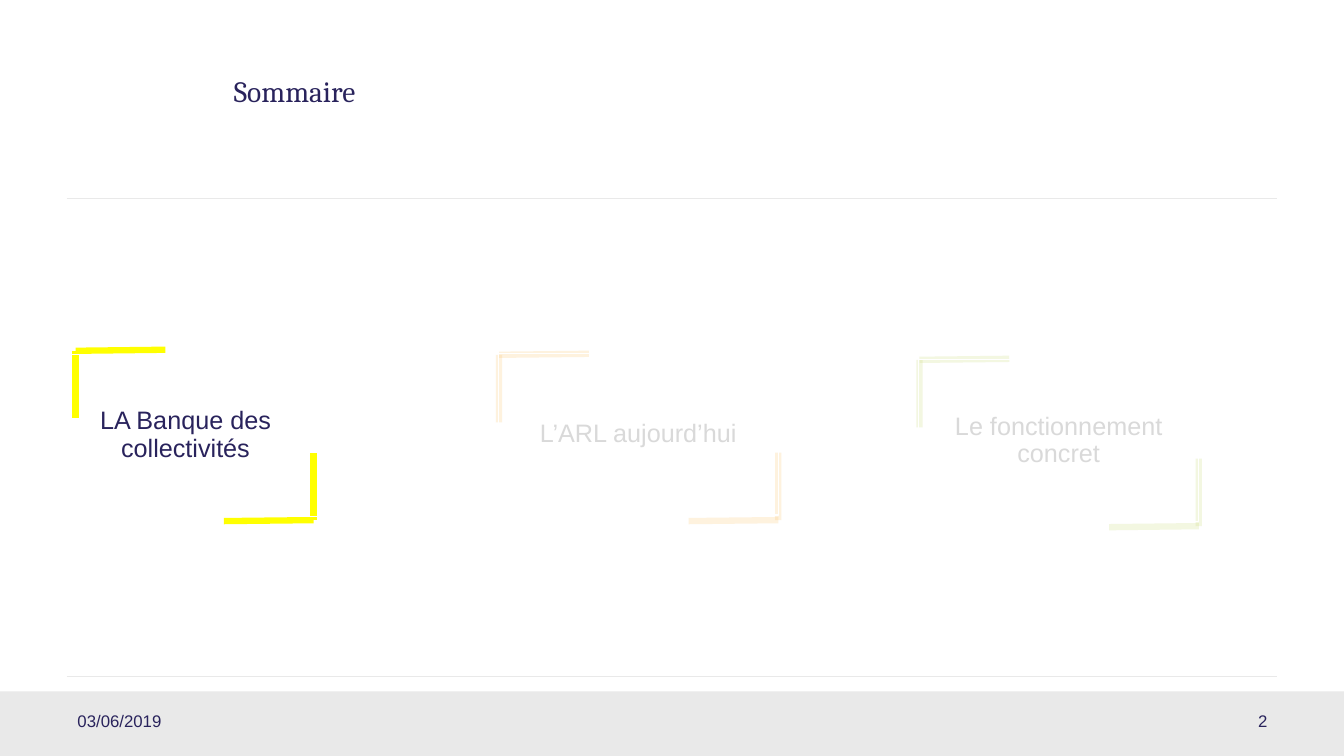
from lxml import etree
from pptx import Presentation
from pptx.dml.color import RGBColor
from pptx.enum import shapes, text
from pptx.oxml.ns import qn
from pptx.util import Inches, Pt

NAVY = RGBColor(0x29, 0x23, 0x5C)
WHITE = RGBColor(0xFF, 0xFF, 0xFF)
PALE_GREY = RGBColor(0xE9, 0xE9, 0xE9)
MUTED = RGBColor(0xD9, 0xD9, 0xD9)
YELLOW = RGBColor(0xFF, 0xFF, 0x00)
ORANGE = RGBColor(0xFB, 0xBE, 0x5E)
GREEN = RGBColor(0xC6, 0xD7, 0x6B)

ARM_WIDTH, ARM_HEIGHT = 0.89, 0.67
CHAPTER_WIDTH, CHAPTER_HEIGHT = 2.78, 1.6

# wording, text colour, left, top, bracket colour, opacity, bracket corners
CHAPTERS = [
    ("LA Banque des collectivités", NAVY, 0.45, 3.52, YELLOW, 100,
     (0.75, 3.48), (3.11, 5.16)),
    ("L’ARL aujourd’hui", MUTED, 4.94, 3.51, ORANGE, 20,
     (4.95, 3.52), (7.72, 5.16)),
    ("Le fonctionnement concret", MUTED, 9.11, 3.57, GREEN, 20,
     (9.12, 3.57), (11.89, 5.22)),
]


def write(shape, wording, size=18, font="Arial", color=NAVY,
          align=text.PP_ALIGN.LEFT, spacing=1.0):
    frame = shape.text_frame
    frame.word_wrap = True
    frame.auto_size = text.MSO_AUTO_SIZE.NONE
    frame.vertical_anchor = text.MSO_ANCHOR.MIDDLE
    paragraph = frame.paragraphs[0]
    paragraph.text = wording
    paragraph.alignment = align
    paragraph.line_spacing = spacing
    paragraph.font.size = Pt(size)
    paragraph.font.name = font
    paragraph.font.color.rgb = color


def add_line(slide, start, end, color, width, opacity=100):
    line = slide.shapes.add_connector(
        shapes.MSO_CONNECTOR.STRAIGHT,
        *(Inches(value) for value in (*start, *end)))
    line.line.color.rgb = color
    line.line.width = Pt(width)
    properties = line._element.spPr
    etree.SubElement(properties, qn("a:effectLst"))
    if opacity < 100:
        tint = properties.find(".//" + qn("a:srgbClr"))
        etree.SubElement(tint, qn("a:alpha")).set("val", str(opacity * 1000))


def add_bracket(slide, corner, direction, color, opacity):
    """Draw two arms from a corner: direction 1 opens right and down, -1 left and up."""
    x, y = corner
    arm_ends = [(x, y + direction * ARM_HEIGHT),
                (x + direction * ARM_WIDTH, y - direction * 0.01)]
    for end in arm_ends:
        add_line(slide, corner, end, color, 4.5, opacity)


def add_rectangle(slide, left, top, width, height):
    rectangle = slide.shapes.add_shape(
        shapes.MSO_SHAPE.RECTANGLE,
        *(Inches(value) for value in (left, top, width, height)))
    rectangle.shadow.inherit = False
    return rectangle


def add_chapter(slide, wording, color, left, top):
    chapter = add_rectangle(slide, left, top, CHAPTER_WIDTH, CHAPTER_HEIGHT)
    chapter.fill.background()
    chapter.line.color.rgb = WHITE
    chapter.line.width = Pt(0.75)
    write(chapter, wording, color=color, align=text.PP_ALIGN.CENTER, spacing=0.9)


def add_footer_text(slide, left, wording, align):
    box = slide.shapes.add_textbox(
        Inches(left), Inches(6.95), Inches(3.11), Inches(0.4))
    write(box, wording, size=12, align=align)


def place_title(slide, wording):
    title = slide.shapes.title
    title.left, title.top = Inches(2.22), Inches(0.55)
    title.width, title.height = Inches(9.66), Inches(0.75)
    write(title, wording, size=21, font="Cambria", spacing=0.9)


def main():
    deck = Presentation()
    deck.slide_width, deck.slide_height = Inches(13.33), Inches(7.5)
    slide = deck.slides.add_slide(deck.slide_layouts[5])

    footer = add_rectangle(slide, 0, 6.86, 13.33, 0.64)
    footer.fill.solid()
    footer.fill.fore_color.rgb = PALE_GREY
    footer.line.fill.background()
    for y in (1.97, 6.71):
        add_line(slide, (0.66, y), (12.67, y), PALE_GREY, 1)

    for wording, color, left, top, accent, opacity, upper, lower in CHAPTERS:
        add_bracket(slide, upper, 1, accent, opacity)
        add_bracket(slide, lower, -1, accent, opacity)
        add_chapter(slide, wording, color, left, top)

    place_title(slide, "Sommaire")
    add_footer_text(slide, 0.67, "03/06/2019", text.PP_ALIGN.LEFT)
    add_footer_text(slide, 9.56, "2", text.PP_ALIGN.RIGHT)
    deck.save("out.pptx")


if __name__ == "__main__":
    main()
